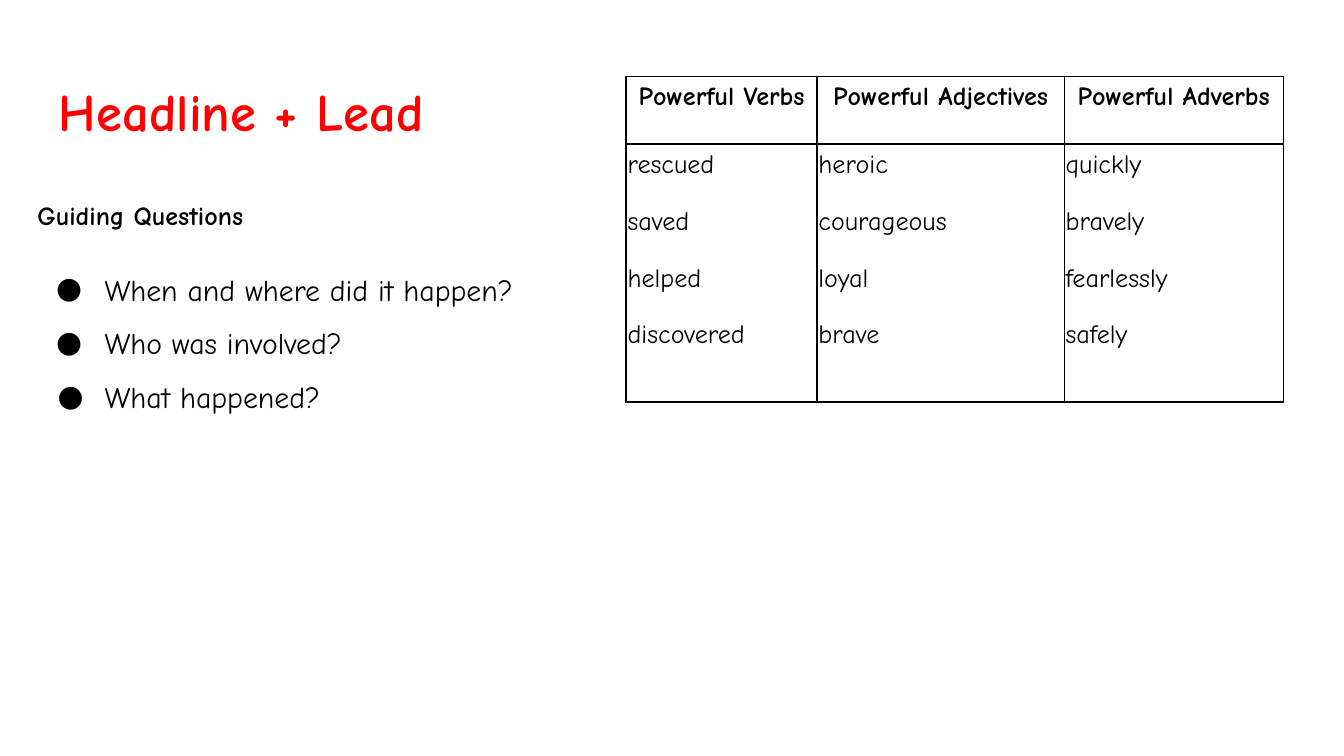
from lxml import etree
from pptx import Presentation
from pptx.dml.color import RGBColor
from pptx.enum import text
from pptx.oxml import ns
from pptx.util import Inches, Pt

FONT = "Comic Neue"
BLACK, RED = "000000", "FF0000"
BODY = {"size": 14, "bold": False, "color": BLACK}
BOLD = {**BODY, "bold": True}
WORDS = {
    "Powerful Verbs": ["rescued", "saved", "helped", "discovered"],
    "Powerful Adjectives": ["heroic", "courageous", "loyal", "brave"],
    "Powerful Adverbs": ["quickly", "bravely", "fearlessly", "safely"],
}
# Each question with its hanging indent
QUESTIONS = {
    "When and where did it happen?": 0.36,
    "Who was involved?": 0.36,
    "What happened?": 0.35,
}


def rgb(value):
    return RGBColor.from_string(value)


def add_para(tf, line, fmt, first=False, **layout):
    p = tf.paragraphs[0] if first else tf.add_paragraph()
    for name, value in layout.items():
        setattr(p, name, value)
    r = p.add_run()
    r.text = line
    for name, value in {"name": FONT, "size": Pt(fmt["size"]), "bold": fmt["bold"]}.items():
        setattr(r.font, name, value)
    r.font.color.rgb = rgb(fmt["color"])
    return p


def add_bullet(p, left, hanging):
    pPr = p._p.get_or_add_pPr()
    pPr.set("marL", str(Inches(left)))
    pPr.set("indent", str(-Inches(hanging)))
    color = etree.SubElement(pPr, ns.qn("a:buClr"))
    etree.SubElement(color, ns.qn("a:srgbClr"), val=BLACK)
    etree.SubElement(pPr, ns.qn("a:buFont"), typeface=FONT)
    etree.SubElement(pPr, ns.qn("a:buChar"), char="●")


def add_box(s, x, y, w, h):
    tf = s.shapes.add_textbox(*map(Inches, (x, y, w, h))).text_frame
    tf.word_wrap = True
    for side in ("left", "right", "top", "bottom"):
        setattr(tf, f"margin_{side}", Inches(0.1))
    return tf


def set_borders(cell):
    tcPr = cell._tc.get_or_add_tcPr()
    for index, side in enumerate(("lnL", "lnR", "lnT", "lnB")):
        ln = etree.Element(ns.qn(f"a:{side}"), w=str(Pt(1)))
        fill = etree.SubElement(ln, ns.qn("a:solidFill"))
        etree.SubElement(fill, ns.qn("a:srgbClr"), val=BLACK)
        tcPr.insert(index, ln)


def add_title(s, x, y, w, h):
    tf = add_box(s, x, y, w, h)
    add_para(tf, "Headline + Lead", {"size": 28.2, "bold": True, "color": RED}, first=True)


def add_questions(s, x, y, w, h):
    tf = add_box(s, x, y, w, h)
    add_para(tf, "Guiding Questions", BOLD, first=True, line_spacing=1.15, space_before=Pt(12))
    for i, (question, hanging) in enumerate(QUESTIONS.items()):
        p = add_para(tf, question, {**BODY, "size": 16}, line_spacing=1.5,
                     space_before=Pt(0 if i else 12))
        add_bullet(p, 0.5, hanging)


def add_word_table(s, x, y, widths, heights):
    frame = s.shapes.add_table(len(heights), len(widths),
                               *map(Inches, (x, y, sum(widths), sum(heights))))
    table = frame.table
    table.first_row = table.horz_banding = False
    for row, height in zip(table.rows, heights):
        row.height = Inches(height)
    for col, (heading, words) in enumerate(WORDS.items()):
        table.columns[col].width = Inches(widths[col])
        for row, lines in enumerate(([heading], words)):
            cell = table.cell(row, col)
            cell.fill.background()
            set_borders(cell)
            for side in ("left", "right", "top", "bottom"):
                setattr(cell, f"margin_{side}", Inches(0.01))
            align = text.PP_ALIGN.LEFT if row else text.PP_ALIGN.CENTER
            for i, line in enumerate(lines):
                add_para(cell.text_frame, line, BODY if row else BOLD, first=i == 0,
                         alignment=align, line_spacing=1.15, space_before=Pt(12))


def main():
    prs = Presentation()
    # Widescreen 16:9
    prs.slide_width, prs.slide_height = Inches(10), Inches(10 * 9 / 16)
    s = prs.slides.add_slide(prs.slide_layouts[6])
    # Left: headline and guiding questions
    add_title(s, 0.34, 0.49, 9.32, 0.63)
    add_questions(s, 0.18, 1.35, 4.03, 1.85)
    # Right: word bank
    add_word_table(s, 4.66, 0.57, [1.42, 1.84, 1.63], [0.5, 1.92])
    prs.save("out.pptx")


if __name__ == "__main__":
    main()
